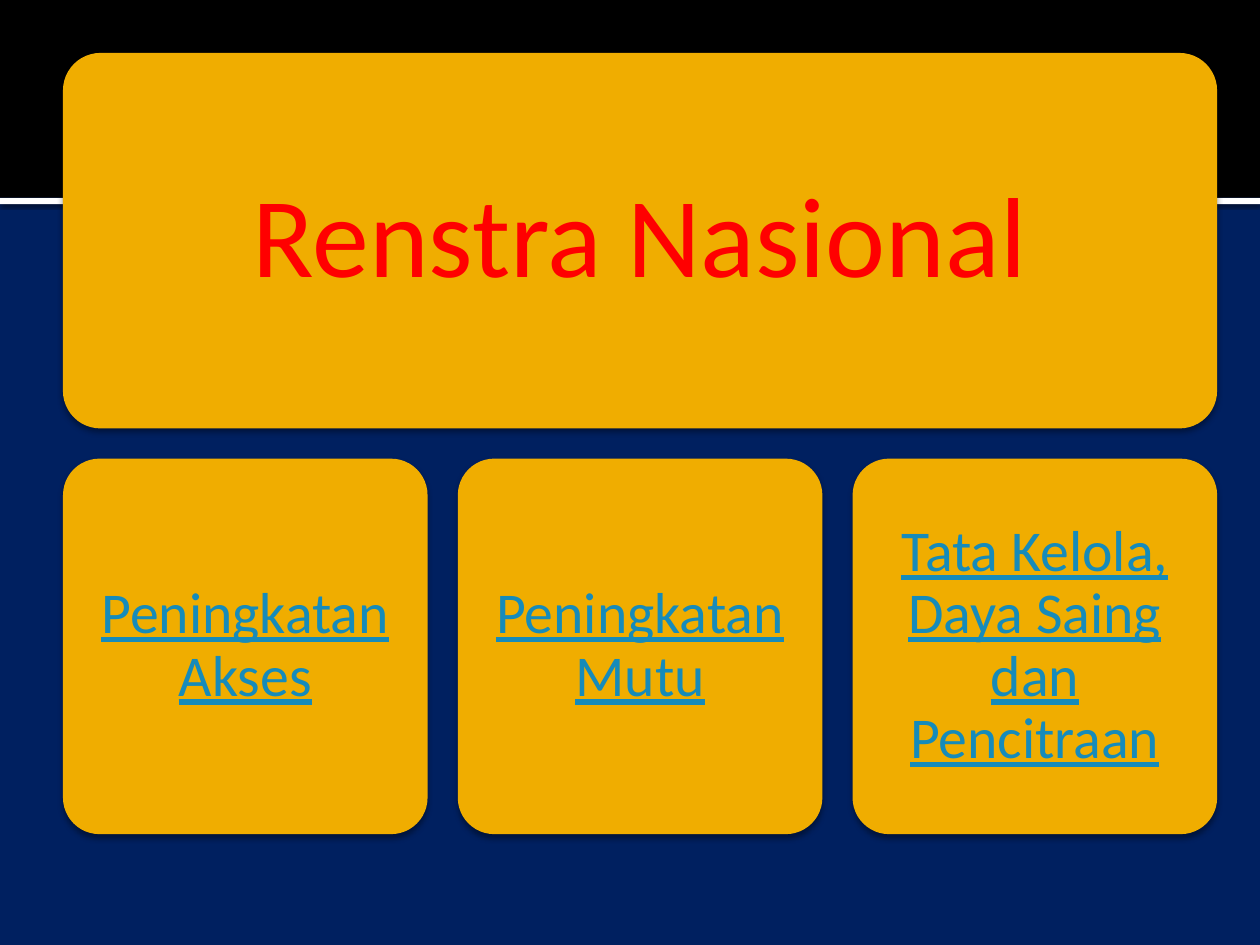
import lxml.etree
import pptx
import pptx.dml.color
import pptx.enum.shapes
import pptx.enum.text
import pptx.oxml.ns
import pptx.util

Inches = pptx.util.Inches
Pt = pptx.util.Pt
SHAPE = pptx.enum.shapes.MSO_SHAPE

COLORS = {
    "background": "002060",
    "band": "000000",
    "rule": "FFFFFF",
    "card": "F0AD00",
    "heading": "FF0000",
    "goal": "168BBA",
    "shadow": "000000",
}
CARD_SHADOW = {"opacity": 38, "blur": 3.1, "distance": 2}
RULE_SHADOW = {"opacity": 60, "blur": 2.5, "distance": 0.8}
HEADING_FONT = {"name": "Calibri", "size": Pt(65), "bold": False, "underline": False}
GOAL_FONT = {"name": "Calibri", "size": Pt(33), "underline": True}
GOALS = [
    "Peningkatan Akses",
    "Peningkatan Mutu",
    "Tata Kelola, Daya Saing dan Pencitraan",
]


def color(name):
    return pptx.dml.color.RGBColor.from_string(COLORS[name])


def add_shadow(shape, style):
    qn = pptx.oxml.ns.qn
    effects = shape.element.spPr.find(qn("a:effectLst"))
    outer = lxml.etree.SubElement(
        effects,
        qn("a:outerShdw"),
        blurRad=str(Pt(style["blur"])),
        dist=str(Pt(style["distance"])),
        dir="5400000",
        rotWithShape="0",
    )
    tint = lxml.etree.SubElement(outer, qn("a:srgbClr"), val=COLORS["shadow"])
    lxml.etree.SubElement(tint, qn("a:alpha"), val=str(style["opacity"] * 1000))


def add_panel(page, kind, box, fill, shadow=None):
    panel = page.shapes.add_shape(kind, *map(Inches, box))
    panel.shadow.inherit = False
    panel.fill.solid()
    panel.fill.fore_color.rgb = color(fill)
    panel.line.fill.background()
    if shadow:
        add_shadow(panel, shadow)
    return panel


def add_card(page, box):
    card = add_panel(page, SHAPE.ROUNDED_RECTANGLE, box, "card", CARD_SHADOW)
    card.adjustments[0] = 0.1
    return card


def write_centered(shape, text, inset, font_style, font_color):
    frame = shape.text_frame
    frame_style = {
        "text": text,
        "word_wrap": True,
        "auto_size": pptx.enum.text.MSO_AUTO_SIZE.NONE,
        "vertical_anchor": pptx.enum.text.MSO_ANCHOR.MIDDLE,
    }
    for side in ("left", "top", "right", "bottom"):
        frame_style["margin_" + side] = Inches(inset)
    for name, value in frame_style.items():
        setattr(frame, name, value)
    para = frame.paragraphs[0]
    para.alignment = pptx.enum.text.PP_ALIGN.CENTER
    para.line_spacing = 0.9
    span = para.runs[0]
    for name, value in font_style.items():
        setattr(span.font, name, value)
    span.font.color.rgb = color(font_color)


def add_backdrop(page, box):
    left, top, width, height = box
    page.background.fill.solid()
    page.background.fill.fore_color.rgb = color("background")
    rule_box = (left, top + height, width, 0.05)
    add_panel(page, SHAPE.RECTANGLE, rule_box, "rule", RULE_SHADOW)
    add_panel(page, SHAPE.RECTANGLE, box, "band")


def add_heading(page, box):
    add_card(page, box)
    title = page.shapes.title
    for name, value in zip(("left", "top", "width", "height"), box):
        setattr(title, name, Inches(value))
    title.element.getparent().append(title.element)
    write_centered(title, "Renstra Nasional", 0.36, HEADING_FONT, "heading")


def add_goals(page, box, gap):
    left, top, width, height = box
    card_width = (width - gap * (len(GOALS) - 1)) / len(GOALS)
    for index, goal in enumerate(GOALS):
        card_left = left + index * (card_width + gap)
        card = add_card(page, (card_left, top, card_width, height))
        write_centered(card, goal, 0.22, GOAL_FONT, "goal")


def main():
    deck = pptx.Presentation()
    deck.slide_width = Inches(10)
    deck.slide_height = Inches(7.5)
    page = deck.slides.add_slide(deck.slide_layouts[5])
    add_backdrop(page, (0, 0, 10, 1.57))
    add_heading(page, (0.5, 0.42, 9.16, 2.98))
    add_goals(page, (0.5, 3.64, 9.16, 2.98), gap=0.24)
    deck.save("out.pptx")


if __name__ == "__main__":
    main()
